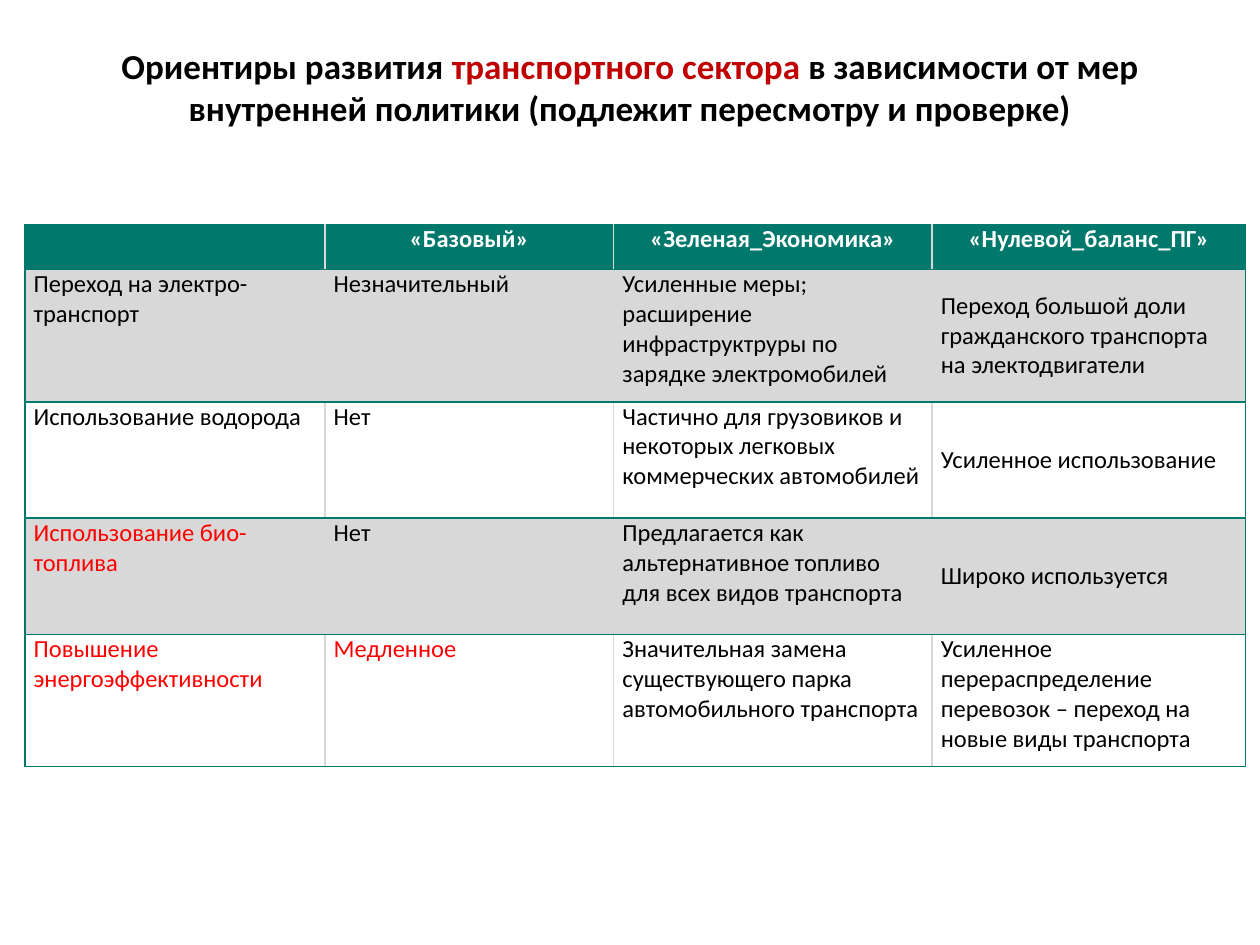
from lxml import etree
from pptx import Presentation
from pptx.dml.color import RGBColor
from pptx.enum import text
from pptx.oxml import ns
from pptx.util import Pt

BLACK = RGBColor(0, 0, 0)
WHITE = RGBColor(255, 255, 255)
RED = RGBColor(255, 0, 0)
DARK_RED = RGBColor(0xC0, 0, 0)
TEAL = RGBColor(0, 0x78, 0x6B)
GREY = RGBColor(0xD8, 0xD8, 0xD8)

TITLE = [
    ("Ориентиры развития ", BLACK),
    ("транспортного сектора ", DARK_RED),
    ("в зависимости от мер внутренней политики (подлежит пересмотру и проверке)", BLACK),
]
MEASURES = [
    ["", "«Базовый»", "«Зеленая_Экономика»", "«Нулевой_баланс_ПГ»"],
    ["Переход на электро-транспорт", "Незначительный",
     "Усиленные меры; расширение инфраструктруры по зарядке электромобилей",
     "Переход большой доли гражданского транспорта на электодвигатели"],
    ["Использование водорода", "Нет",
     "Частично для грузовиков и некоторых легковых коммерческих автомобилей",
     "Усиленное использование"],
    ["Использование био-топлива", "Нет",
     "Предлагается как альтернативное топливо для всех видов транспорта",
     "Широко используется"],
    ["Повышение энергоэффективности", "Медленное",
     "Значительная замена существующего парка автомобильного транспорта",
     "Усиленное перераспределение перевозок – переход на новые виды транспорта"],
]
RED_CELLS = {(3, 0), (4, 0), (4, 1)}
COLUMN_WIDTHS = [171.5, 165, 182, 179.2]
ROW_HEIGHTS = [25.8, 75.6, 66.5, 66.5, 75.6]


def set_format(target, values):
    for name, value in values.items():
        setattr(target, name, value)


def add_run(paragraph, wording, size, color, bold):
    run = paragraph.add_run()
    run.text = wording
    set_format(run.font, {"name": "Calibri", "size": Pt(size), "bold": bold})
    run.font.color.rgb = color


def add_title(slide):
    title = slide.shapes.add_textbox(Pt(36), Pt(21.6), Pt(648), Pt(55.6))
    set_format(title.text_frame, {
        "word_wrap": True, "vertical_anchor": text.MSO_ANCHOR.MIDDLE})
    heading = title.text_frame.paragraphs[0]
    heading.alignment = text.PP_ALIGN.CENTER
    for wording, color in TITLE:
        add_run(heading, wording, 20, color, True)


def set_borders(cell, colors):
    """Draw 1 pt borders; colors maps L, R, T and B, in that order."""
    properties = cell._tc.get_or_add_tcPr()
    for side, color in colors.items():
        line = etree.SubElement(properties, ns.qn(f"a:ln{side}"), w=str(Pt(1)))
        fill = etree.SubElement(line, ns.qn("a:solidFill"))
        etree.SubElement(fill, ns.qn("a:srgbClr"), val=str(color))


def fill_cell(cell, row, column, wording):
    header = row == 0
    last_column = len(COLUMN_WIDTHS) - 1
    centred = column == last_column and row in (1, 2, 3)
    set_format(cell, {
        "margin_left": Pt(5), "margin_right": Pt(5),
        "margin_top": 0, "margin_bottom": 0,
        "vertical_anchor": text.MSO_ANCHOR.MIDDLE if centred else text.MSO_ANCHOR.TOP})
    set_borders(cell, {
        "L": TEAL if column == 0 else GREY,
        "R": TEAL if column == last_column else GREY,
        "T": TEAL, "B": TEAL})
    if header or row % 2:
        cell.fill.solid()
        cell.fill.fore_color.rgb = TEAL if header else GREY
    else:
        cell.fill.background()
    if wording:
        paragraph = cell.text_frame.paragraphs[0]
        set_format(paragraph, {
            "space_before": Pt(3), "space_after": Pt(3),
            "alignment": text.PP_ALIGN.CENTER if header else text.PP_ALIGN.LEFT})
        body_color = RED if (row, column) in RED_CELLS else BLACK
        add_run(paragraph, wording, 14, WHITE if header else body_color, header)


def add_measures_table(slide):
    table = slide.shapes.add_table(
        len(ROW_HEIGHTS), len(COLUMN_WIDTHS), Pt(14.2), Pt(128.2),
        Pt(sum(COLUMN_WIDTHS)), Pt(sum(ROW_HEIGHTS))).table
    for column, width in zip(table.columns, COLUMN_WIDTHS):
        column.width = Pt(width)
    for row, height in zip(table.rows, ROW_HEIGHTS):
        row.height = Pt(height)
    for row, wordings in enumerate(MEASURES):
        for column, wording in enumerate(wordings):
            fill_cell(table.cell(row, column), row, column, wording)


def main():
    presentation = Presentation()
    set_format(presentation, {"slide_width": Pt(720), "slide_height": Pt(540)})
    slide = presentation.slides.add_slide(presentation.slide_layouts[6])
    add_title(slide)
    add_measures_table(slide)
    presentation.save("out.pptx")


if __name__ == "__main__":
    main()
